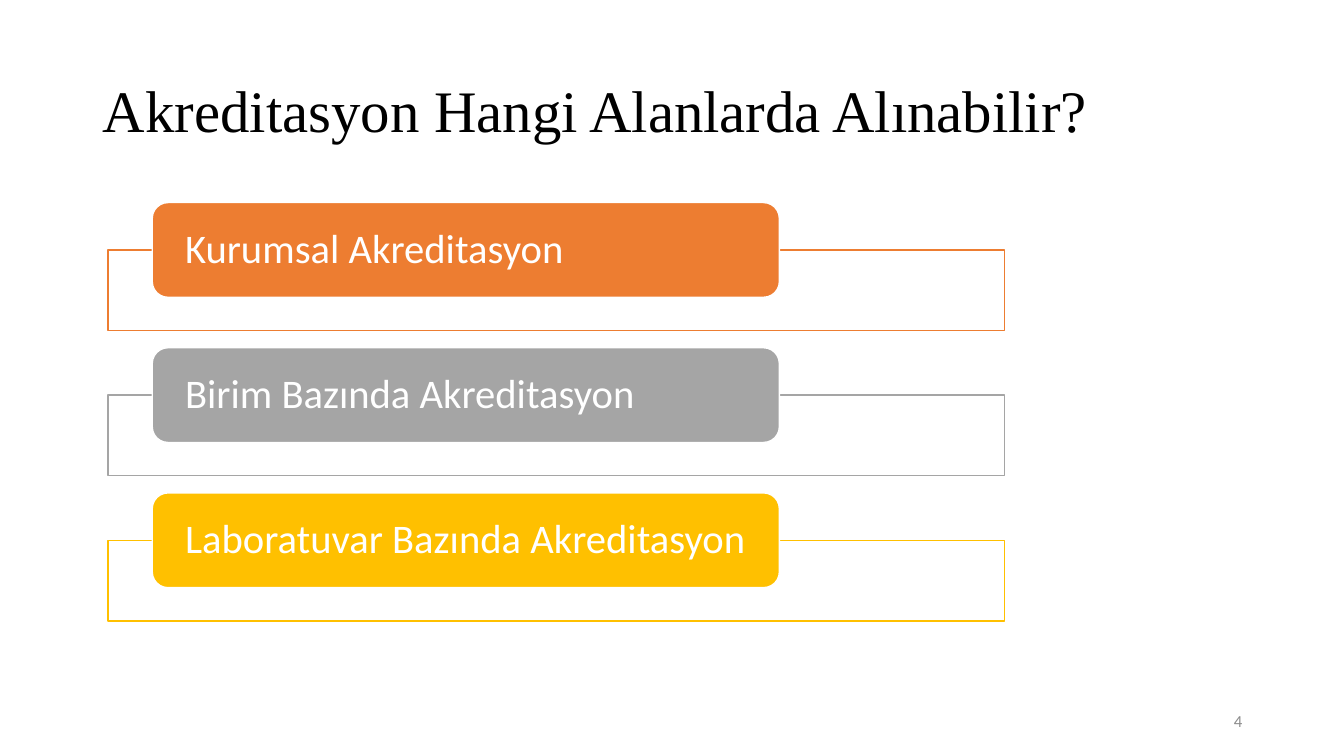
from typing import NamedTuple

from pptx import Presentation
from pptx.dml.color import RGBColor
from pptx.enum.shapes import MSO_SHAPE
from pptx.enum.text import MSO_ANCHOR, MSO_AUTO_SIZE, PP_ALIGN
from pptx.util import Inches, Pt

RECT = MSO_SHAPE.RECTANGLE
ROUND = MSO_SHAPE.ROUNDED_RECTANGLE
MIDDLE = MSO_ANCHOR.MIDDLE
NO_FIT = MSO_AUTO_SIZE.NONE
LEFT, RIGHT = PP_ALIGN.LEFT, PP_ALIGN.RIGHT
WHITE = "FFFFFF"
TITLE_ONLY = 5


class Box(NamedTuple):
    left: float
    top: float
    width: float
    height: float

    def down(self, step: float) -> "Box":
        return self._replace(top=self.top + step)

    def emu(self) -> list:
        return [Inches(side) for side in self]


class Area(NamedTuple):
    name: str
    color: str


AREAS = [
    Area("Kurumsal Akreditasyon", "ED7D31"),
    Area("Birim Bazında Akreditasyon", "A5A5A5"),
    Area("Laboratuvar Bazında Akreditasyon", "FFC000"),
]
FRAME = Box(1.07, 2.48, 8.89, 0.8)
LABEL = Box(1.51, 2.01, 6.22, 0.94)
STEP = 1.44


def rgb(code: str) -> RGBColor:
    return RGBColor.from_string(code)


def write(shape, text: str, size: float, color: str, font: str = "Calibri",
          align=LEFT, space: float = 0.9) -> None:
    frame = shape.text_frame
    frame.word_wrap = True
    frame.auto_size = NO_FIT
    frame.vertical_anchor = MIDDLE
    para = frame.paragraphs[0]
    para.alignment = align
    para.line_spacing = space
    run = para.add_run()
    run.text = text
    run.font.name = font
    run.font.size = Pt(size)
    run.font.color.rgb = rgb(color)


def block(slide, kind, box: Box, fill: str, line: str):
    shape = slide.shapes.add_shape(kind, *box.emu())
    shape.shadow.inherit = False
    shape.fill.solid()
    shape.fill.fore_color.rgb = rgb(fill)
    shape.line.color.rgb = rgb(line)
    shape.line.width = Pt(1)
    return shape


def row(slide, area: Area, step: float) -> None:
    block(slide, RECT, FRAME.down(step), WHITE, area.color)
    label = block(slide, ROUND, LABEL.down(step), area.color, WHITE)
    text = label.text_frame
    text.margin_left = text.margin_right = Inches(0.28)
    text.margin_top = text.margin_bottom = 0
    write(label, area.name, 29, WHITE)


def main() -> None:
    deck = Presentation()
    deck.slide_width, deck.slide_height = Inches(13.33), Inches(7.5)
    slide = deck.slides.add_slide(deck.slide_layouts[TITLE_ONLY])

    # Title
    title = slide.shapes.title
    title.left, title.top, title.width, title.height = Box(0.92, 0.4, 11.5, 1.45).emu()
    write(title, "Akreditasyon Hangi Alanlarda Alınabilir?", 42, "000000",
          "Times New Roman")

    # Accreditation areas
    for index, area in enumerate(AREAS):
        row(slide, area, index * STEP)

    # Page number
    page = slide.shapes.add_textbox(*Box(9.42, 6.95, 3, 0.4).emu())
    write(page, "4", 12, "8C8C8C", align=RIGHT, space=1.0)

    deck.save("out.pptx")


if __name__ == "__main__":
    main()
